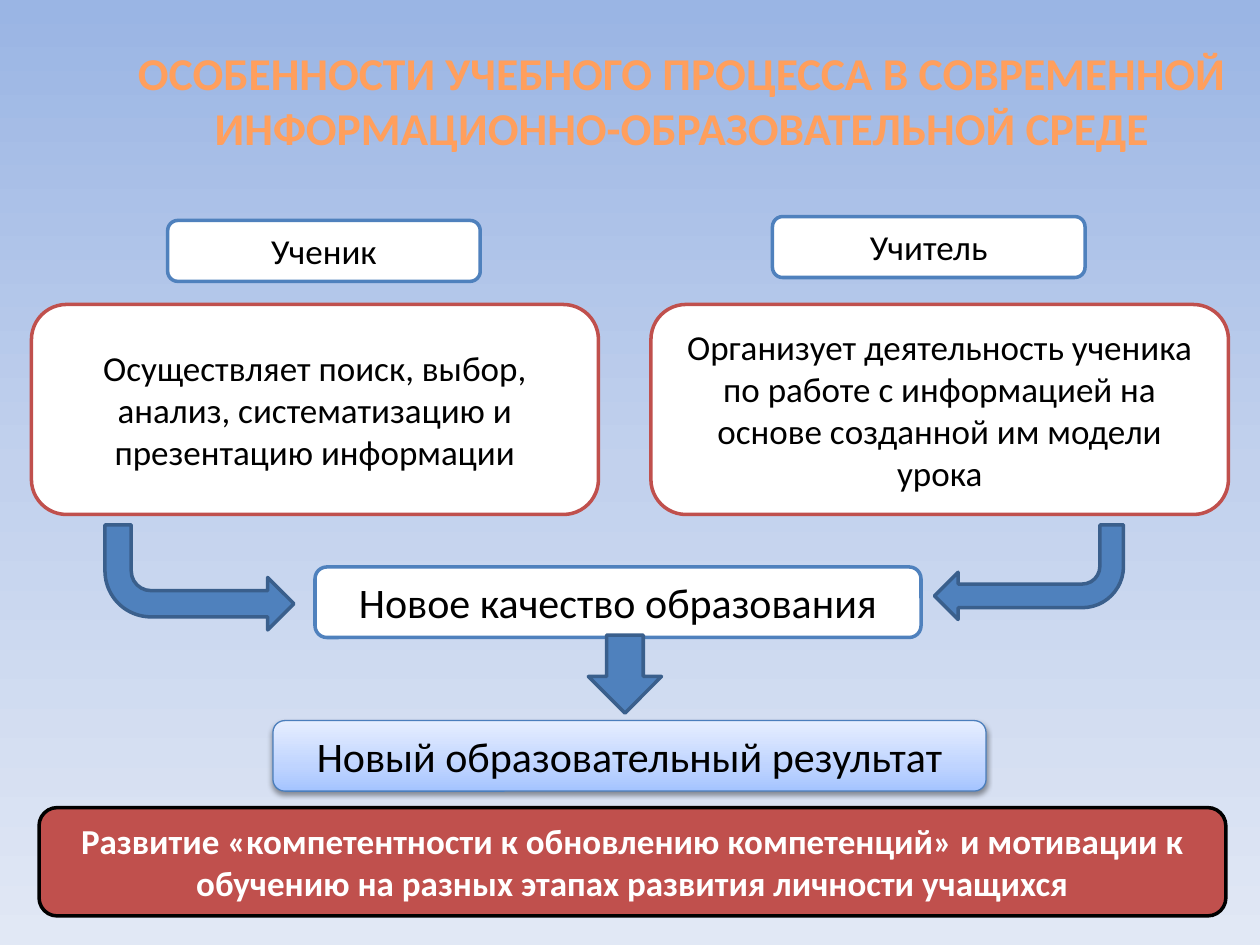
"""Build a slide on the learning process in a modern information environment."""
from lxml.etree import SubElement
from pptx import Presentation
from pptx.dml.color import RGBColor
from pptx.enum.shapes import MSO_SHAPE as SHAPE
from pptx.enum.text import MSO_ANCHOR as ANCHOR, MSO_AUTO_SIZE as AUTO_SIZE, PP_ALIGN as ALIGN
from pptx.oxml.ns import qn
from pptx.util import Pt

FONT = "Calibri"
WHITE, BLACK, BLUE, RED, DARK_BLUE = "FFFFFF", "000000", "4F81BD", "C0504D", "3A5F8C"
TITLE = "ОСОБЕННОСТИ УЧЕБНОГО ПРОЦЕССА В СОВРЕМЕННОЙ ИНФОРМАЦИОННО-ОБРАЗОВАТЕЛЬНОЙ СРЕДЕ"
TITLE_STOPS = [(0, "FFA367"), (25, "FF9F5D"), (50, "F38E3A"), (75, "FF9F5D"), (100, "FFA367")]
SKY_STOPS = [(0, "9AB5E4"), (50, "C2D1ED"), (100, "E1E8F5")]
RESULT_STOPS = [(0, "A4C4FF"), (35, "BFD4FF"), (100, "E6EEFF")]

ROLES = [
    ("Ученик", (95.8, 126, 178.6, 34.8)),
    ("Учитель", (441.4, 123.8, 178.6, 34.8)),
]
ACTIVITIES = [
    ("Осуществляет поиск, выбор, анализ, систематизацию и презентацию информации",
     (18, 174, 324, 120)),
    ("Организует деятельность ученика по работе с информацией на основе созданной им модели урока",
     (372, 174, 330, 120)),
]
QUALITY = ("Новое качество образования", (180, 324, 346.3, 40.3))
RESULT = ("Новый образовательный результат", (156, 411.8, 407.5, 40.3))
GOAL = ("Развитие «компетентности к обновлению компетенций» и мотивации к обучению "
        "на разных этапах развития личности учащихся", (22.3, 461.5, 678.2, 61.9))
ARROWS = [
    (SHAPE.BENT_ARROW, (534, 300, 108, 54), 180, False),
    (SHAPE.BENT_ARROW, (60, 300, 108, 60), 0, True),
    (SHAPE.RIGHT_ARROW, (334.8, 364.3, 44.6, 41.8), 90, False),
]


def color(value):
    return RGBColor.from_string(value)


def set_gradient(fill, parent, stops, angle):
    fill.solid()
    gradient = parent.makeelement(qn("a:gradFill"), {"rotWithShape": "1"})
    stop_list = SubElement(gradient, qn("a:gsLst"))
    for position, value in stops:
        stop = SubElement(stop_list, qn("a:gs"), pos=str(position * 1000))
        SubElement(stop, qn("a:srgbClr"), val=value)
    SubElement(gradient, qn("a:lin"), ang=str(angle * 60000), scaled="0")
    parent.replace(parent.find(qn("a:solidFill")), gradient)


def add_shadow(shape):
    effects = shape.element.spPr.find(qn("a:effectLst"))
    shadow = SubElement(effects, qn("a:outerShdw"), blurRad=str(Pt(3.1)), dist=str(Pt(1.6)),
                        dir="5400000", rotWithShape="0")
    shade = SubElement(shadow, qn("a:srgbClr"), val=BLACK)
    SubElement(shade, qn("a:alpha"), val="38000")


def write(shape, text, size, bold=False):
    paragraph = shape.text_frame.paragraphs[0]
    paragraph.alignment = ALIGN.CENTER
    run = paragraph.add_run()
    run.text = text
    run.font.name, run.font.size, run.font.bold = FONT, Pt(size), bold
    return run


def add_shape(slide, kind, place, fill, line, width=2):
    shape = slide.shapes.add_shape(kind, *map(Pt, place))
    shape.shadow.inherit = False
    shape.fill.solid()
    shape.fill.fore_color.rgb = color(fill)
    shape.line.color.rgb = color(line)
    shape.line.width = Pt(width)
    return shape


def add_box(slide, content, line, size=20, fill=WHITE, ink=BLACK, bold=False, width=2, grow=True):
    text, place = content
    shape = add_shape(slide, SHAPE.ROUNDED_RECTANGLE, place, fill, line, width)
    frame = shape.text_frame
    frame.word_wrap = True
    frame.vertical_anchor = ANCHOR.TOP if grow else ANCHOR.MIDDLE
    frame.auto_size = AUTO_SIZE.SHAPE_TO_FIT_TEXT if grow else AUTO_SIZE.NONE
    write(shape, text, size, bold).font.color.rgb = color(ink)
    return shape


def main():
    presentation = Presentation()
    presentation.slide_width, presentation.slide_height = Pt(720), Pt(540)
    slide = presentation.slides.add_slide(presentation.slide_layouts[5])
    background = slide.background.fill
    background.solid()
    set_gradient(background, slide.element.find(".//" + qn("p:bgPr")), SKY_STOPS, 90)

    title = slide.shapes.title
    title.left, title.top, title.width, title.height = map(Pt, (66, 12, 648, 90))
    title.text_frame.vertical_anchor = ANCHOR.MIDDLE
    run = write(title, TITLE, 26, bold=True)
    run.font.fill.solid()
    set_gradient(run.font.fill, run.font._element, TITLE_STOPS, 90)

    for role, activity in zip(ROLES, ACTIVITIES):
        add_box(slide, role, BLUE)
        add_box(slide, activity, RED, grow=False)
    add_box(slide, QUALITY, BLUE, size=24)
    result = add_box(slide, RESULT, "4B7EBC", size=24, width=0.75)
    set_gradient(result.fill, result.element.spPr, RESULT_STOPS, 270)
    add_shadow(result)
    add_box(slide, GOAL, BLACK, fill=RED, ink=WHITE, bold=True)

    for kind, place, rotation, flipped in ARROWS:
        arrow = add_shape(slide, kind, place, BLUE, DARK_BLUE)
        arrow.rotation = rotation
        if flipped:
            arrow.element.spPr.find(qn("a:xfrm")).set("flipV", "1")

    presentation.save("out.pptx")


if __name__ == "__main__":
    main()
